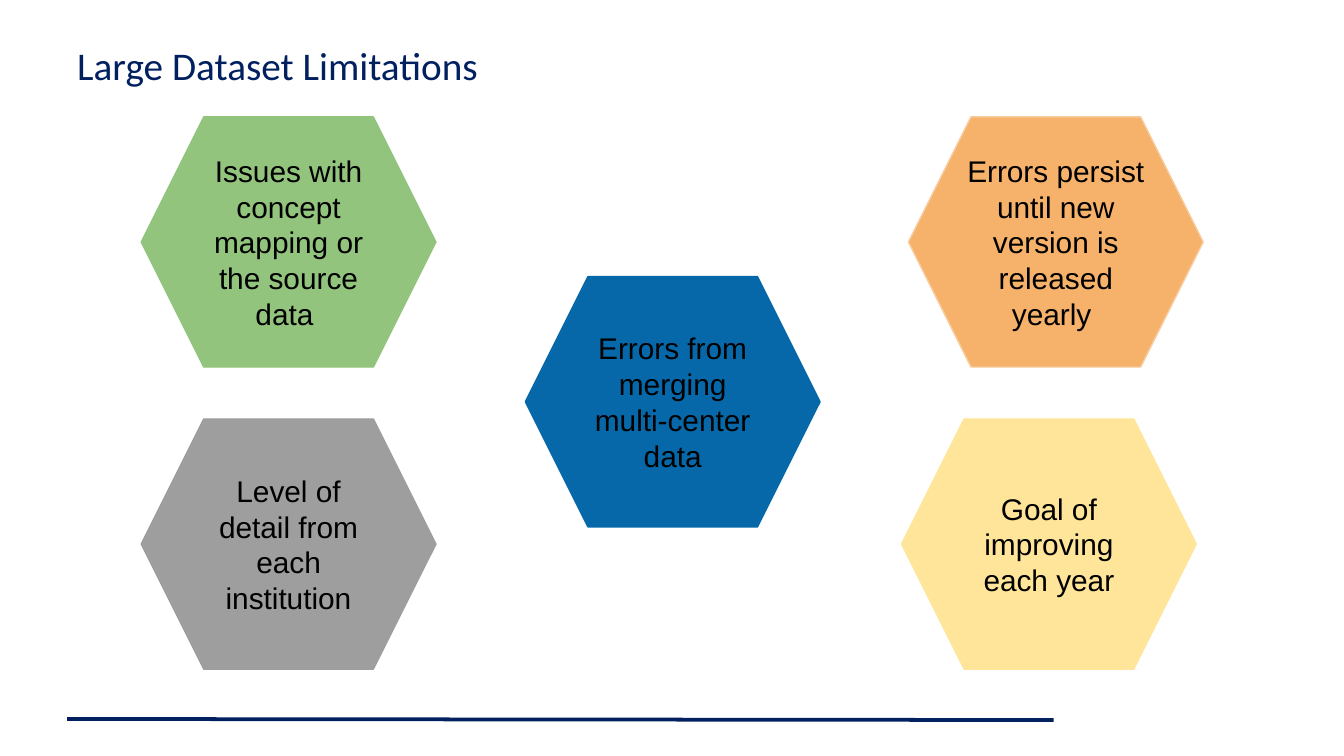
import pptx
import pptx.dml.color
import pptx.enum.shapes
import pptx.enum.text
import pptx.util
from lxml import etree
from pptx.util import Cm


def color(hex_string):
    return pptx.dml.color.RGBColor.from_string(hex_string)


NAVY = "002060"

deck = pptx.Presentation()
deck.slide_width = Cm(25.4)
deck.slide_height = Cm(14.29)
page = deck.slides.add_slide(deck.slide_layouts[6])

# Footer rule
rule = page.shapes.add_connector(
    pptx.enum.shapes.MSO_CONNECTOR.STRAIGHT, Cm(1.27), Cm(13.59), Cm(19.91), Cm(13.61))
rule.line.color.rgb = color(NAVY)
rule.line.width = pptx.util.Pt(2)
etree.SubElement(rule._element.spPr, pptx.oxml.ns.qn("a:effectLst"))

# Title
title = page.shapes.add_textbox(Cm(1.27), Cm(0.48), Cm(22.86), Cm(1.3))
frame = title.text_frame
frame.word_wrap = True
frame.vertical_anchor = pptx.enum.text.MSO_ANCHOR.BOTTOM
frame.margin_left = frame.margin_right = Cm(0.19)
frame.margin_top = frame.margin_bottom = Cm(0.1)
para = frame.paragraphs[0]
para.text = "Large Dataset Limitations"
para.font.name = "Calibri"
para.font.size = pptx.util.Pt(21)
para.font.color.rgb = color(NAVY)

# Limitations: text, left, top, fill, outline
LEFT, MIDDLE, RIGHT = 2.67, 9.93, 17.17
UPPER, CENTER, LOWER = 2.21, 5.23, 7.92
limitations = [
    ("Issues with concept mapping or the source data ", LEFT, UPPER, "93C47D", "93C47D"),
    ("Errors from merging multi-center data", MIDDLE, CENTER, "0768A9", "0768A9"),
    ("Errors persist until new version is released yearly ", RIGHT, UPPER, "F6B26B", "F9CB9C"),
    ("Goal of improving each year", RIGHT - 0.13, LOWER, "FFE599", "FFE599"),
    ("Level of detail from each institution", LEFT, LOWER, "9E9E9E", "9E9E9E"),
]
for text, left, top, fill, outline in limitations:
    hexagon = page.shapes.add_shape(
        pptx.enum.shapes.MSO_SHAPE.HEXAGON, Cm(left), Cm(top), Cm(5.57), Cm(4.73))
    hexagon.adjustments[0] = 0.25
    hexagon.shadow.inherit = False
    hexagon.fill.solid()
    hexagon.fill.fore_color.rgb = color(fill)
    hexagon.line.color.rgb = color(outline)
    hexagon.line.width = pptx.util.Pt(0.75)
    frame = hexagon.text_frame
    frame.word_wrap = True
    frame.vertical_anchor = pptx.enum.text.MSO_ANCHOR.MIDDLE
    frame.margin_left = frame.margin_right = Cm(0.25)
    frame.margin_top = frame.margin_bottom = Cm(0.25)
    para = frame.paragraphs[0]
    para.text = text
    para.alignment = pptx.enum.text.PP_ALIGN.CENTER
    para.font.name = "Arial"
    para.font.size = pptx.util.Pt(16)
    para.font.color.rgb = color("000000")

deck.save("out.pptx")
